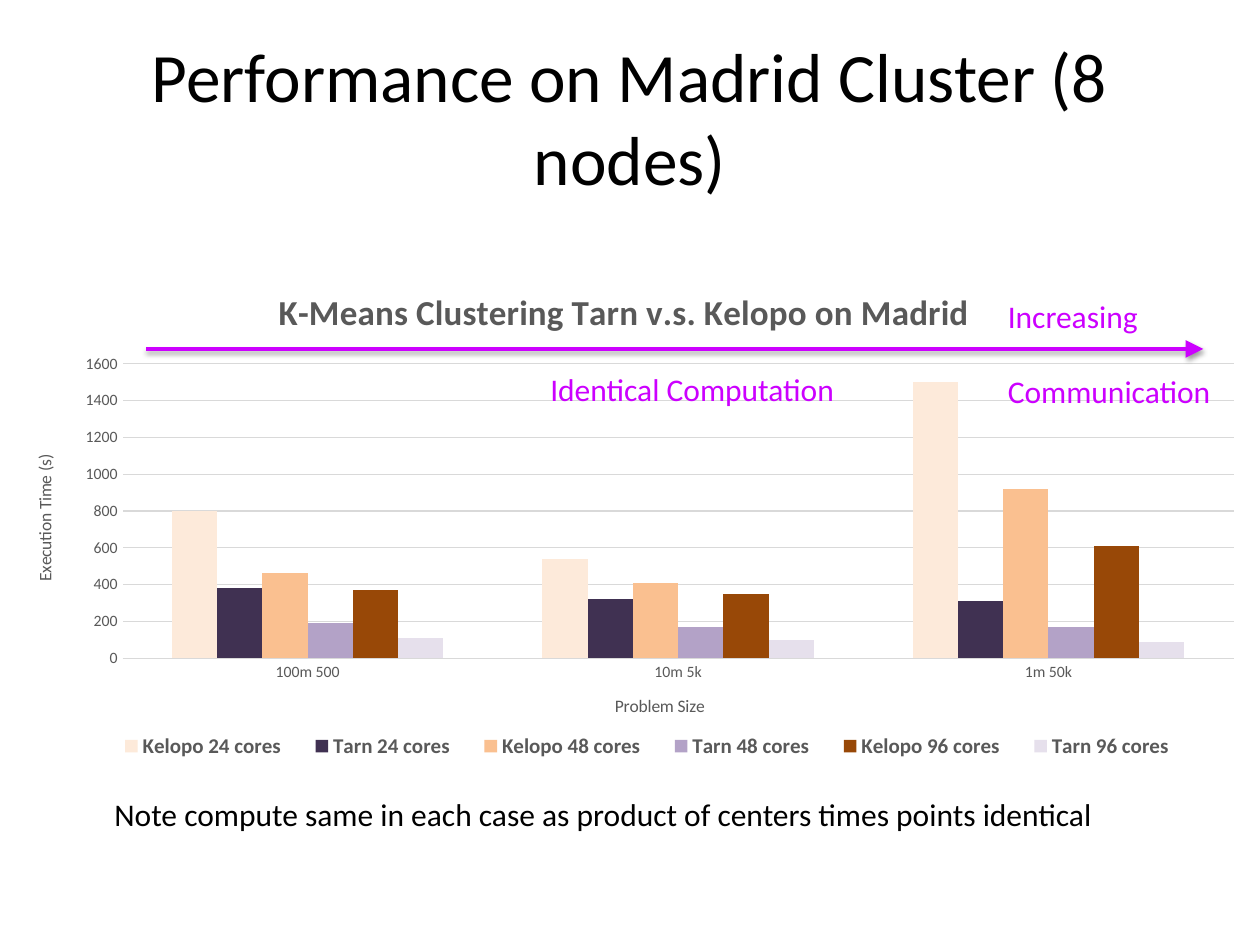
import pptx
import pptx.chart.data
import pptx.dml.color
import pptx.enum.chart
import pptx.enum.shapes
import pptx.enum.text
import pptx.oxml
import pptx.oxml.ns
import pptx.util

Pt = pptx.util.Pt
ALIGN = pptx.enum.text.PP_ALIGN
ANCHOR = pptx.enum.text.MSO_ANCHOR
XL = pptx.enum.chart

COLORS = {
    "ink": "000000",
    "label": "595959",
    "grid": "D9D9D9",
    "accent": "CC00FF",
}
CATEGORIES = ["100m 500", "10m 5k", "1m 50k"]
SERIES = [
    ("Kelopo 24 cores", (800, 540, 1500), "FDEADA"),
    ("Tarn 24 cores", (380, 320, 310), "403152"),
    ("Kelopo 48 cores", (460, 410, 920), "FAC090"),
    ("Tarn 48 cores", (190, 170, 170), "B3A2C7"),
    ("Kelopo 96 cores", (370, 350, 610), "984807"),
    ("Tarn 96 cores", (110, 100, 90), "E6E0EC"),
]


def rgb(name):
    return pptx.dml.color.RGBColor.from_string(COLORS[name])


def set_attrs(obj, values):
    for name, value in values.items():
        setattr(obj, name, value)


def place(element, index, target=None, **box):
    """Give a chart part a manual layout, in fractions of the chart."""
    for old in element.findall(pptx.oxml.ns.qn("c:layout")):
        element.remove(old)
    inner = f'<c:layoutTarget val="{target}"/>' if target else ""
    modes = "".join(f'<c:{k}Mode val="edge"/>' for k in "xy")
    sizes = "".join(f'<c:{k} val="{v}"/>' for k, v in box.items())
    element.insert(index, pptx.oxml.parse_xml(
        f'<c:layout {pptx.oxml.ns.nsdecls("c")}><c:manualLayout>'
        f"{inner}{modes}{sizes}</c:manualLayout></c:layout>"))


class SlideBuilder:
    font = "Calibri"

    def __init__(self, slide):
        self.s = slide

    def style(self, font, size, color="ink", bold=False):
        set_attrs(font, {"name": self.font, "size": Pt(size), "bold": bold})
        font.color.rgb = rgb(color)

    def text(self, box, paragraphs, size=18, color="ink", align=ALIGN.LEFT,
             anchor=ANCHOR.TOP, wrap=True, gap=0):
        sp = self.s.shapes.add_textbox(*map(Pt, box))
        tf = sp.text_frame
        set_attrs(tf, {"word_wrap": wrap, "vertical_anchor": anchor})
        for i, line in enumerate(paragraphs):
            p = tf.add_paragraph() if i else tf.paragraphs[0]
            set_attrs(p, {"alignment": align, "space_before": Pt(gap if i else 0)})
            r = p.add_run()
            r.text = line
            self.style(r.font, size, color)

    def arrow(self, x1, y1, x2, y2, color, width):
        sp = self.s.shapes.add_connector(
            pptx.enum.shapes.MSO_CONNECTOR.STRAIGHT, *map(Pt, (x1, y1, x2, y2)))
        sp.line.color.rgb = rgb(color)
        sp.line.width = Pt(width)
        ns = pptx.oxml.ns.nsdecls("a")
        sp.line._get_or_add_ln().append(pptx.oxml.parse_xml(
            f'<a:tailEnd {ns} type="triangle" w="lg" len="lg"/>'))
        sp._element.spPr.append(pptx.oxml.parse_xml(
            f'<a:effectLst {ns}><a:outerShdw blurRad="{Pt(3.1)}" dist="{Pt(1.6)}" '
            'dir="5400000" rotWithShape="0"><a:srgbClr val="000000">'
            '<a:alpha val="38000"/></a:srgbClr></a:outerShdw></a:effectLst>'))

    def chart_title(self, owner, text, size, bold=False):
        tf = owner.text_frame
        tf.text = text
        self.style(tf.paragraphs[0].runs[0].font, size, "label", bold)

    def axis(self, axis, title, **values):
        set_attrs(axis, {"major_tick_mark": XL.XL_TICK_MARK.NONE,
                         "minor_tick_mark": XL.XL_TICK_MARK.NONE, **values})
        self.style(axis.tick_labels.font, 9, "label")
        self.chart_title(axis.axis_title, title, 10)

    def column_chart(self, box, title, x_title, y_title):
        data = pptx.chart.data.CategoryChartData()
        data.categories = CATEGORIES
        for name, values, _ in SERIES:
            data.add_series(name, values)
        chart = self.s.shapes.add_chart(
            XL.XL_CHART_TYPE.COLUMN_CLUSTERED, *map(Pt, box), data).chart
        self.style(chart.font, 10)

        plot = chart.plots[0]
        set_attrs(plot, {"gap_width": 219, "overlap": 0, "vary_by_categories": False})
        for series, (_, _, color) in zip(plot.series, SERIES):
            series.format.fill.solid()
            series.format.fill.fore_color.rgb = pptx.dml.color.RGBColor.from_string(color)

        self.axis(chart.category_axis, x_title)
        self.axis(chart.value_axis, y_title, minimum_scale=0,
                  maximum_scale=1600, major_unit=200, has_major_gridlines=True)
        chart.value_axis.format.line.fill.background()
        for fmt in (chart.category_axis.format, chart.value_axis.major_gridlines.format):
            fmt.line.color.rgb = rgb("grid")
            fmt.line.width = Pt(0.75)

        self.chart_title(chart.chart_title, title, 20, True)
        chart.has_legend = True
        set_attrs(chart.legend, {"position": XL.XL_LEGEND_POSITION.BOTTOM,
                                 "include_in_layout": False})
        self.style(chart.legend.font, 12, "label", True)

        place(chart._chartSpace.chart.plotArea, 0, "inner", x=0.09, y=0.18, w=0.89, h=0.57)
        place(chart.chart_title._element, 1, x=0.21, y=0.02)
        place(chart.legend._element, 1, x=0.07, y=0.89, w=0.88, h=0.06)


def main():
    prs = pptx.Presentation()
    set_attrs(prs, {"slide_width": Pt(720), "slide_height": Pt(540)})
    b = SlideBuilder(prs.slides.add_slide(prs.slide_layouts[6]))

    b.text((36, 21.6, 648, 90), ["Performance on Madrid Cluster (8 nodes)"],
           size=39.6, align=ALIGN.CENTER, anchor=ANCHOR.MIDDLE)
    b.column_chart((5.8, 154.8, 713.5, 295.2),
                   "K-Means Clustering Tarn v.s. Kelopo on Madrid",
                   "Problem Size", "Execution Time (s)")
    b.text((58.3, 450.7, 576, 28.8),
           ["Note compute same in each case as product of centers times points identical"],
           wrap=False)
    b.arrow(83.5, 199.4, 687.6, 199.4, "accent", 2)
    b.text((568.8, 166.3, 131, 72.7), ["Increasing", "Communication"],
           color="accent", gap=21)
    b.text((307.4, 208.1, 185, 28.8), ["Identical Computation"], color="accent")

    prs.save("out.pptx")


if __name__ == "__main__":
    main()
